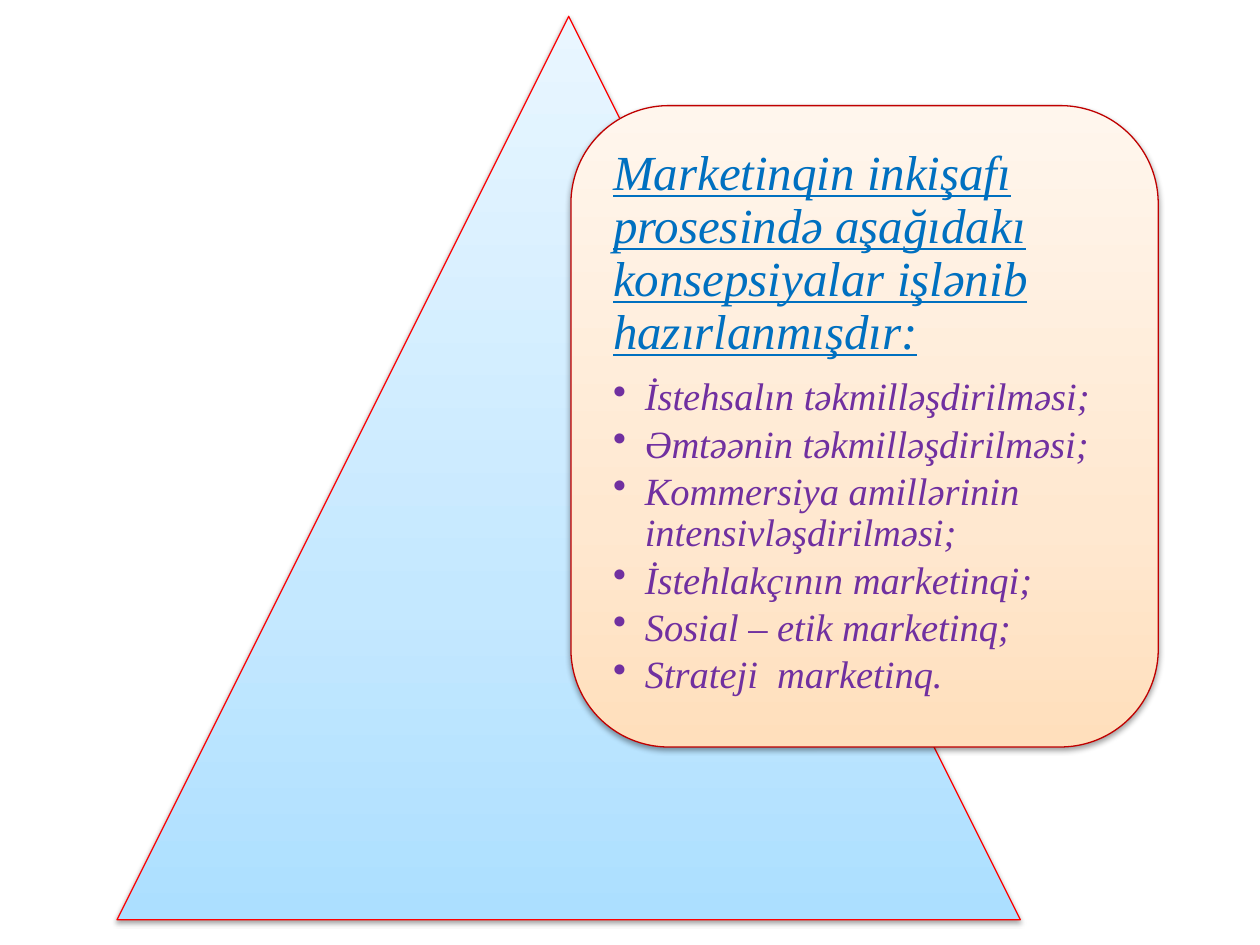
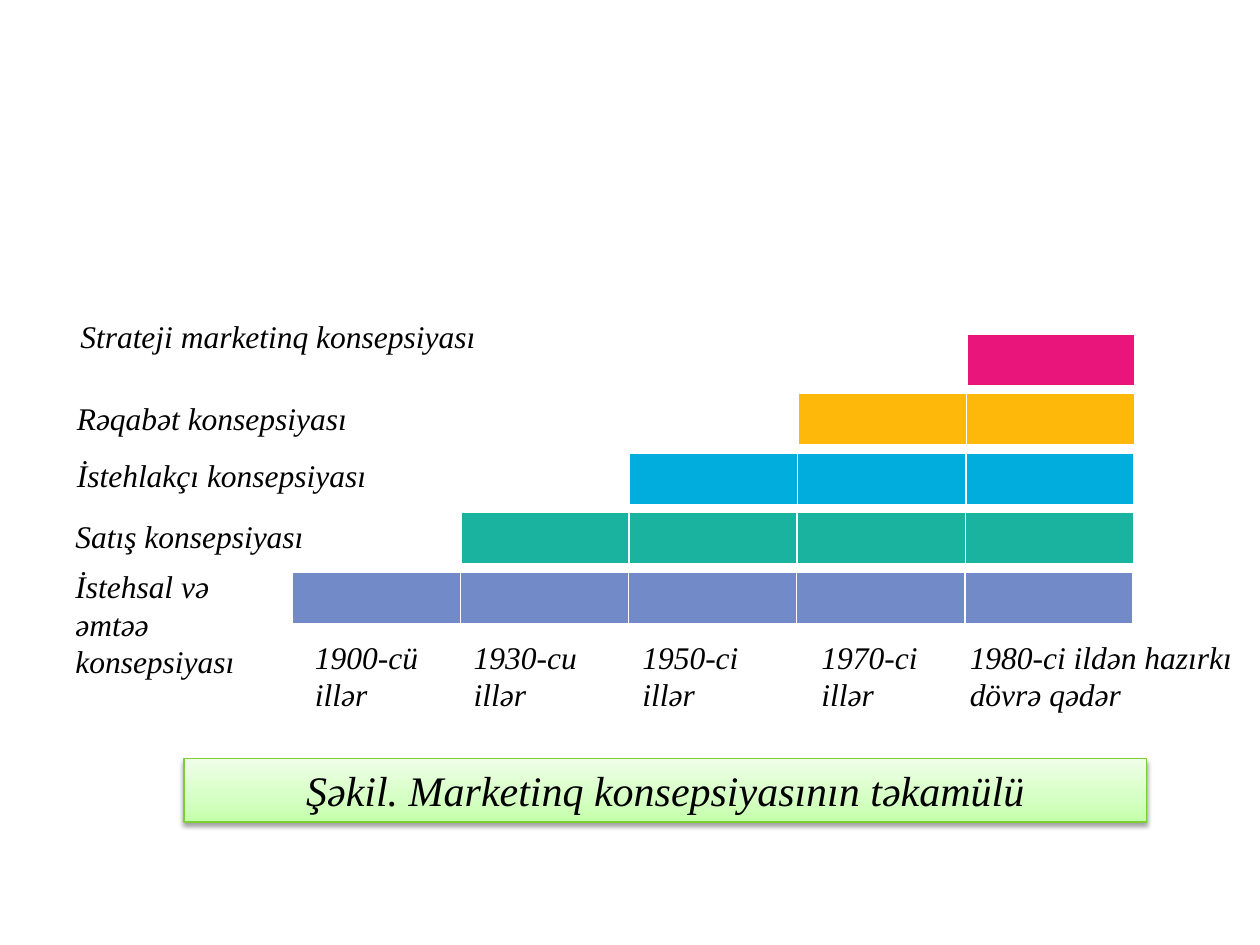
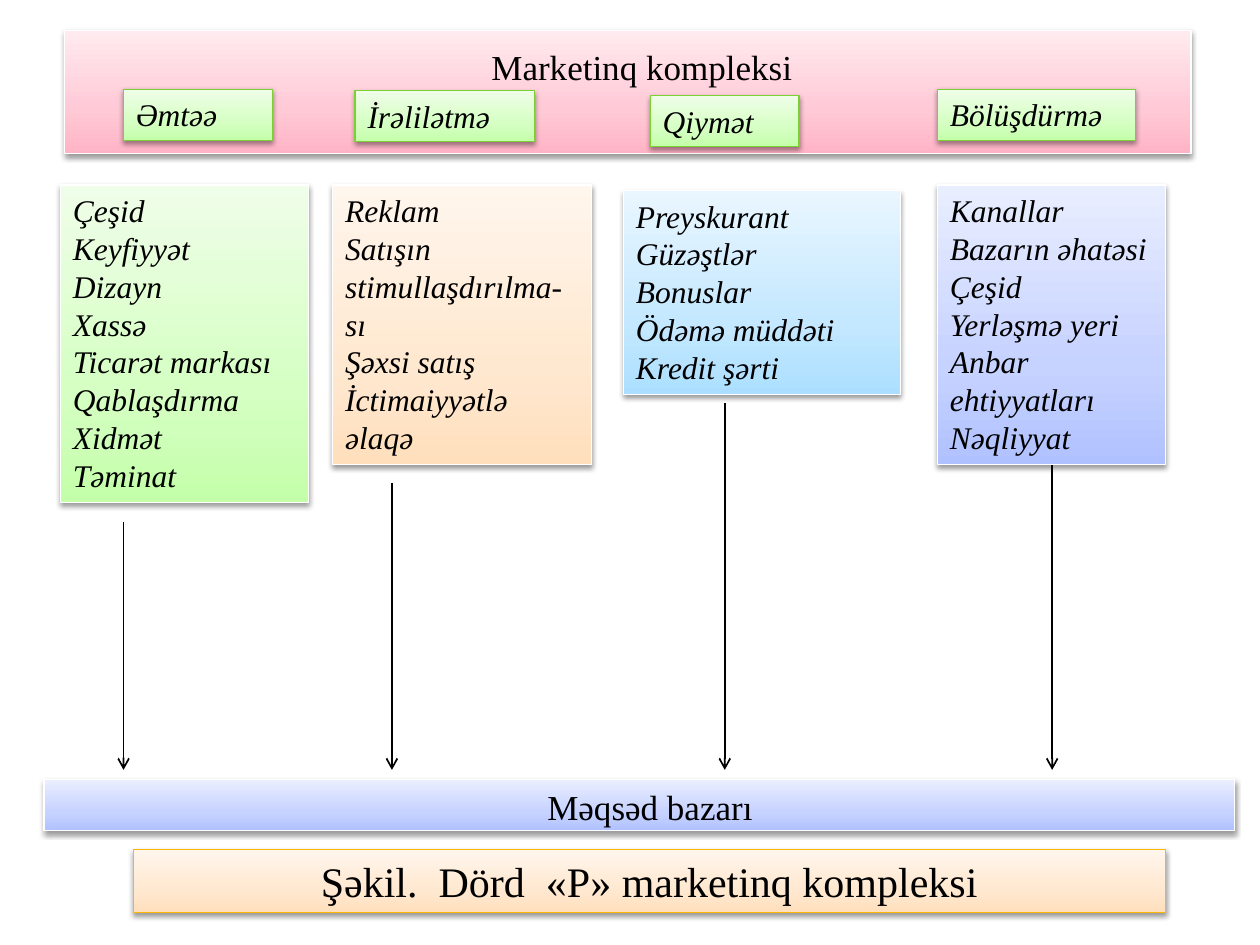
from copy import deepcopy

from lxml.etree import SubElement
from pptx import Presentation
from pptx.dml.color import RGBColor
from pptx.enum.shapes import MSO_CONNECTOR, MSO_SHAPE
from pptx.enum.text import MSO_ANCHOR, PP_ALIGN
from pptx.oxml.ns import qn
from pptx.util import Cm, Pt

FONT = "Times New Roman"
BLACK = RGBColor(0x00, 0x00, 0x00)
WHITE = RGBColor(0xFF, 0xFF, 0xFF)
RED = RGBColor(0xFF, 0x00, 0x00)
DARK_RED = RGBColor(0xC0, 0x00, 0x00)
HEADING_BLUE = RGBColor(0x00, 0x70, 0xC0)
PURPLE = RGBColor(0x70, 0x30, 0xA0)
GREEN = RGBColor(0x7C, 0xD0, 0x36)
AMBER = RGBColor(0xFE, 0xB6, 0x04)

# Gradient tints, from the bottom of a panel to its top
SKY = [RGBColor(0xAC, 0xDF, 0xFF), RGBColor(0xC4, 0xE8, 0xFF), RGBColor(0xE9, 0xF6, 0xFF)]
PEACH = [RGBColor(0xFF, 0xDF, 0xBC), RGBColor(0xFF, 0xE8, 0xD0), RGBColor(0xFF, 0xF6, 0xED)]
LIME = [RGBColor(0xC4, 0xFF, 0xAA), RGBColor(0xD5, 0xFF, 0xC3), RGBColor(0xEF, 0xFE, 0xE8)]
PINK = [RGBColor(0xFF, 0xB3, 0xC6), RGBColor(0xFF, 0xC9, 0xD6), RGBColor(0xFF, 0xEB, 0xEF)]
LILAC = [RGBColor(0xB0, 0xC1, 0xFF), RGBColor(0xC6, 0xD2, 0xFF), RGBColor(0xE9, 0xEE, 0xFF)]

STEP_COLORS = [
    RGBColor(0x73, 0x8A, 0xC8),
    RGBColor(0x1A, 0xB3, 0x9F),
    RGBColor(0x00, 0xAD, 0xDC),
    RGBColor(0xFE, 0xB8, 0x0A),
    RGBColor(0xEA, 0x15, 0x7A),
]


def write_text(frame, *lines, size=18, color=BLACK, italic=True, underline=False,
               align=PP_ALIGN.LEFT, bullet=False, spacing=None, after=None):
    """Add each line as a paragraph after any text already in the frame."""
    frame.word_wrap = True
    frame.vertical_anchor = MSO_ANCHOR.TOP
    for line in lines:
        paragraph = frame.add_paragraph() if frame.text else frame.paragraphs[0]
        paragraph.alignment = align
        paragraph.line_spacing = spacing
        paragraph.space_after = after
        run = paragraph.add_run()
        run.text = line
        run.font.name = FONT
        run.font.size = Pt(size)
        run.font.italic = italic
        run.font.underline = underline
        run.font.color.rgb = color
        if bullet:
            paragraph.level = 1
            props = paragraph._p.get_or_add_pPr()
            props.set("marL", str(Cm(0.64)))
            props.set("indent", str(-Cm(0.64)))
            SubElement(props, qn("a:buChar"), char="•")


def add_panel(slide, box, tint, border, kind=MSO_SHAPE.RECTANGLE):
    """Add a gradient shape with a thin border and a soft shadow below."""
    panel = slide.shapes.add_shape(kind, *map(Cm, box))
    panel.fill.gradient()
    panel.fill.gradient_angle = 90
    stops = panel.element.xpath(".//a:gsLst")[0]
    stops.insert(1, deepcopy(stops[0]))
    for stop, position, color in zip(panel.fill.gradient_stops, (0, 0.35, 1), tint):
        stop.position = position
        stop.color.rgb = color
    panel.line.color.rgb = border
    panel.line.width = Pt(0.75)
    panel.shadow.inherit = False
    effects = panel.element.spPr.find(qn("a:effectLst"))
    shadow = SubElement(effects, qn("a:outerShdw"), blurRad=str(Pt(3.1)),
                        dist=str(Pt(1.6)), dir="5400000", rotWithShape="0")
    shade = SubElement(shadow, qn("a:srgbClr"), val=str(BLACK))
    SubElement(shade, qn("a:alpha"), val="38000")
    return panel


prs = Presentation()
prs.slide_width, prs.slide_height = Cm(25.4), Cm(19.05)
blank = prs.slide_layouts[6]

# Slide 1: list of marketing concepts
concepts = prs.slides.add_slide(blank)
add_panel(concepts, (2.36, 0.33, 18.21, 18.21), SKY, RED, MSO_SHAPE.ISOSCELES_TRIANGLE)
add_panel(concepts, (11.51, 2.13, 11.84, 12.93), PEACH, DARK_RED, MSO_SHAPE.ROUNDED_RECTANGLE)
concept_list = concepts.shapes.add_textbox(Cm(12.06), Cm(2.69), Cm(10.67), Cm(11.79)).text_frame
concept_list.margin_left = concept_list.margin_right = Cm(0.3)
concept_list.margin_top = concept_list.margin_bottom = Cm(0.3)
write_text(concept_list, "Marketinqin inkişafı prosesində aşağıdakı konsepsiyalar işlənib hazırlanmışdır:",
           size=28, color=HEADING_BLUE, underline=True, spacing=0.9, after=Pt(10))
write_text(
    concept_list,
    "İstehsalın təkmilləşdirilməsi;",
    "Əmtəənin təkmilləşdirilməsi;",
    "Kommersiya amillərinin intensivləşdirilməsi;",
    "İstehlakçının marketinqi;",
    "Sosial – etik marketinq;",
    "Strateji  marketinq.",
    size=22, color=PURPLE, bullet=True, spacing=0.9, after=Pt(3.3),
)

# Slide 2: steps of the concepts over the years
evolution = prs.slides.add_slide(blank)
for step, color in enumerate(STEP_COLORS):
    periods = len(STEP_COLORS) - step
    bar = evolution.shapes.add_table(
        1, periods, Cm(5.89 + 3.4 * step), Cm(11.53 - 1.2 * step), Cm(3.39 * periods), Cm(1.04)
    ).table
    bar.horz_banding = False
    for cell in bar.iter_cells():
        cell.fill.solid()
        cell.fill.fore_color.rgb = color

step_labels = [
    ("1900-cü illər", 6.1, 12.73, 3.2, 1.8),
    ("1930-cu illər", 9.3, 12.73, 3.2, 1.8),
    ("1950-ci illər", 12.7, 12.73, 3.2, 1.8),
    ("1970-ci illər", 16.31, 12.73, 3, 1.8),
    ("1980-ci ildən hazırkı dövrə qədər", 19.3, 12.73, 5.8, 1.8),
    ("Strateji marketinq konsepsiyası", 1.37, 6.27, 15.6, 1.03),
    ("Rəqabət konsepsiyası", 1.3, 7.92, 12.19, 1.03),
    ("İstehlakçı konsepsiyası", 1.3, 9.07, 11, 1.03),
    ("Satış konsepsiyası", 1.27, 10.29, 7.39, 1.03),
    ("İstehsal və əmtəə konsepsiyası", 1.27, 11.3, 3.99, 2.57),
]
for label, *box in step_labels:
    write_text(evolution.shapes.add_textbox(*map(Cm, box)).text_frame, label)

evolution_caption = add_panel(evolution, (3.71, 15.29, 19.41, 1.28), LIME, GREEN)
write_text(evolution_caption.text_frame, "Şəkil. Marketinq konsepsiyasının təkamülü",
           size=24, align=PP_ALIGN.CENTER)

# Slide 3: the four parts of the marketing mix
mix = prs.slides.add_slide(blank)
add_panel(mix, (1.3, 0.61, 22.71, 2.49), PINK, WHITE)
add_panel(mix, (0.89, 15.72, 24, 1.03), LILAC, WHITE)
for heading, *box in [
    ("Məqsəd bazarı", 9.7, 15.72, 6.81, 1.11),
    ("Marketinq kompleksi", 8.84, 0.79, 8.2, 1.11),
]:
    write_text(mix.shapes.add_textbox(*map(Cm, box)).text_frame, heading,
               size=20, italic=False, align=PP_ALIGN.CENTER)

# Name and its box, tint and box of the tools, arrow start, tools
mix_parts = [
    ("Əmtəə", (2.49, 1.8, 3, 1.03), LIME, (1.22, 3.73, 5, 6.4), (2.49, 10.52),
     ["Çeşid", "Keyfiyyət", "Dizayn", "Xassə", "Ticarət markası", "Qablaşdırma",
      "Xidmət", "Təminat"]),
    ("İrəlilətmə", (7.16, 1.83, 3.61, 1.03), PEACH, (6.71, 3.73, 5.21, 5.64), (7.9, 9.73),
     ["Reklam", "Satışın stimullaşdırılma-sı", "Şəxsi satış", "İctimaiyyətlə əlaqə"]),
    ("Qiymət", (13.11, 1.93, 3, 1.03), SKY, (12.57, 3.84, 5.59, 4.11), (14.61, 8.13),
     ["Preyskurant", "Güzəştlər", "Bonuslar", "Ödəmə müddəti", "Kredit şərti"]),
    ("Bölüşdürmə", (18.9, 1.8, 3.99, 1.03), LILAC, (18.9, 3.73, 4.6, 5.64), (21.21, 9.37),
     ["Kanallar", "Bazarın əhatəsi", "Çeşid", "Yerləşmə yeri", "Anbar ehtiyyatları",
      "Nəqliyyat"]),
]
for name, name_box, tint, tools_box, (arrow_x, arrow_top), tools in mix_parts:
    write_text(add_panel(mix, name_box, LIME, GREEN).text_frame, name)
    write_text(add_panel(mix, tools_box, tint, WHITE).text_frame, *tools)
    arrow = mix.shapes.add_connector(
        MSO_CONNECTOR.STRAIGHT, Cm(arrow_x), Cm(arrow_top), Cm(arrow_x), Cm(15.52))
    arrow.line.color.rgb = BLACK
    arrow.line.width = Pt(1)
    SubElement(arrow.element.spPr.find(qn("a:ln")), qn("a:tailEnd"), type="arrow")
    SubElement(arrow.element.spPr, qn("a:effectLst"))

mix_caption = add_panel(mix, (2.69, 17.12, 20.8, 1.28), PEACH, AMBER)
write_text(mix_caption.text_frame, "Şəkil.  Dörd  «P» marketinq kompleksi",
           size=24, italic=False, align=PP_ALIGN.CENTER)

prs.save("out.pptx")
